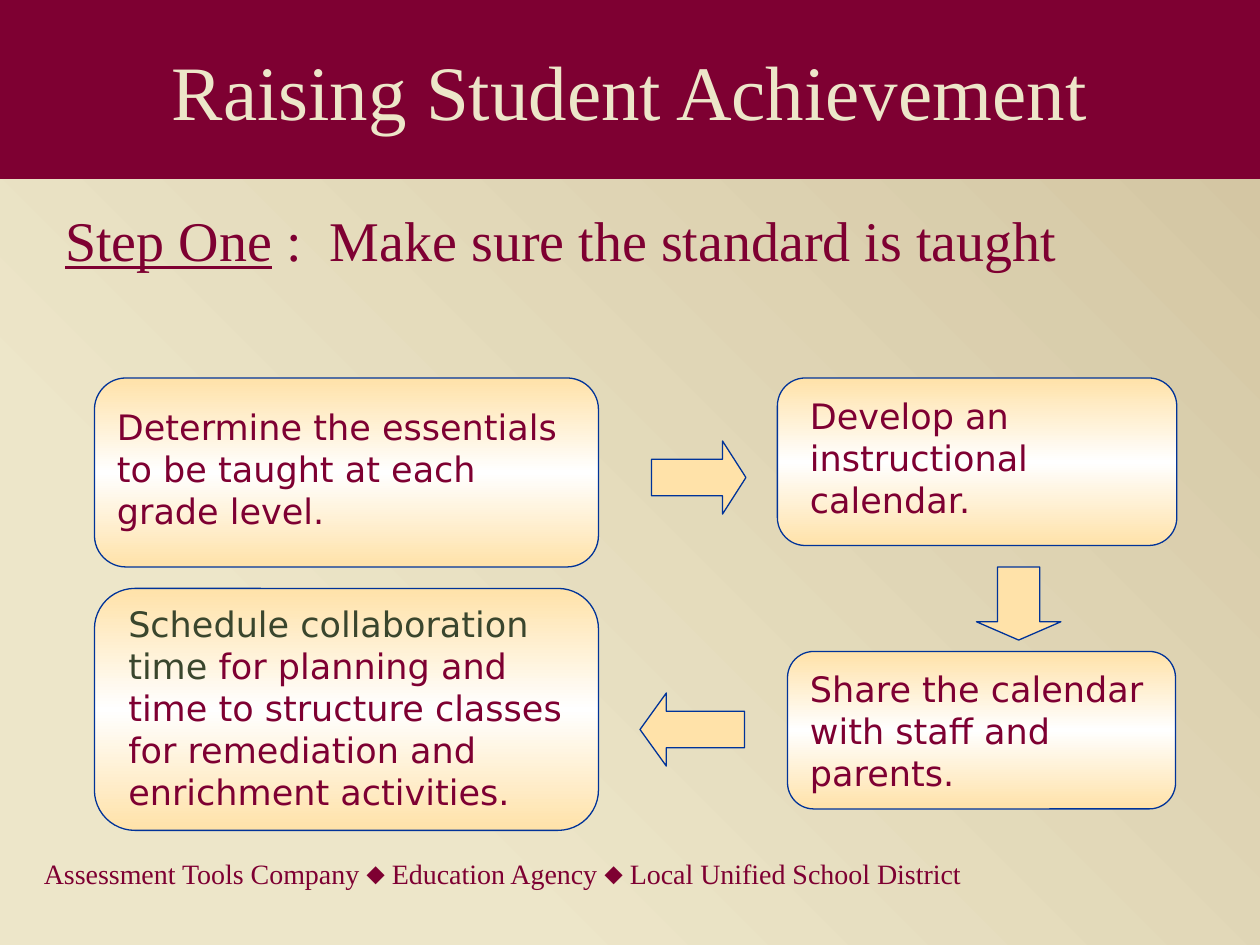
from copy import deepcopy

from pptx import Presentation
from pptx.dml.color import RGBColor
from pptx.enum.shapes import MSO_SHAPE as SHAPE
from pptx.enum.text import MSO_ANCHOR as ANCHOR, PP_ALIGN as ALIGN
from pptx.oxml.ns import qn
from pptx.util import Inches, Pt

COLORS = {"maroon": "7E0032", "cream": "EDE6C9", "tan": "D1C39F", "peach": "FFE2A9",
          "white": "FFFFFF", "blue": "003399", "green": "3A462D"}
SERIF, SANS = "Times New Roman", "DejaVu Sans"
STEPS = [
    (SHAPE.FLOWCHART_ALTERNATE_PROCESS, (0.75, 3, 4, 1.5), (0.83, 3.17, 3.83, 1.1),
     [("Determine the essentials to be taught at each grade level.", {})]),
    (SHAPE.ROUNDED_RECTANGLE, (6.17, 3, 3.17, 1.33), (6.33, 3.08, 2.83, 1.1),
     [("Develop an instructional calendar.", {})]),
    (SHAPE.ROUNDED_RECTANGLE, (6.25, 5.17, 3.08, 1.25), (6.33, 5.25, 2.92, 1.1),
     [("Share the calendar with staff and parents.", {})]),
    (SHAPE.ROUNDED_RECTANGLE, (0.75, 4.67, 4, 1.92), (0.92, 4.73, 3.83, 1.77),
     [("Schedule collaboration time ", {"color": "green"}),
      ("for planning and time to structure classes for remediation "
       "and enrichment activities.", {})]),
]
ARROWS = [
    (SHAPE.RIGHT_ARROW, (5.17, 3.5, 0.75, 0.58), 0.32),
    (SHAPE.DOWN_ARROW, (7.75, 4.5, 0.67, 0.58), 0.25),
    (SHAPE.LEFT_ARROW, (5.08, 5.5, 0.83, 0.58), 0.36),
]


def rgb(name):
    """Return the named palette colour."""
    return RGBColor.from_string(COLORS[name])


def set_gradient(fill, element, stops, angle):
    """Fill with a linear gradient of (position, colour name) stops."""
    fill.gradient()
    fill.gradient_angle = angle
    gs_list = element.find(".//" + qn("a:gsLst"))
    while len(gs_list) < len(stops):
        gs_list.append(deepcopy(gs_list[-1]))
    for stop, (position, color) in zip(fill.gradient_stops, stops):
        stop.position = position
        stop.color.rgb = rgb(color)


def write_text(sp, runs, size, font=SERIF, color="maroon", align=ALIGN.LEFT, anchor=ANCHOR.TOP):
    """Write one paragraph of (text, overrides) runs into a shape."""
    tf = sp.text_frame
    tf.word_wrap = True
    tf.vertical_anchor = anchor
    p = tf.paragraphs[0]
    p.alignment = align
    for text, style in runs:
        r = p.add_run()
        r.text = text
        r.font.name = font
        r.font.size = Pt(size)
        r.font.underline = style.get("underline", False)
        r.font.color.rgb = rgb(style.get("color", color))


def add_text(slide, box, runs, size, **style):
    """Add a text box holding one paragraph."""
    write_text(slide.shapes.add_textbox(*map(Inches, box)), runs, size, **style)


def add_shape(slide, kind, box, fill=None, line=None):
    """Add a preset shape without shadow."""
    sp = slide.shapes.add_shape(kind, *map(Inches, box))
    sp.shadow.inherit = False
    if fill:
        sp.fill.solid()
        sp.fill.fore_color.rgb = rgb(fill)
    if line:
        sp.line.color.rgb = rgb(line)
        sp.line.width = Pt(0.75)
    else:
        sp.line.fill.background()
    return sp


def add_step(slide, kind, box, text_box, runs):
    """Add a gradient step card and its text."""
    sp = add_shape(slide, kind, box, line="blue")
    set_gradient(sp.fill, sp.element, [(0, "peach"), (0.5, "white"), (1, "peach")], 90)
    add_text(slide, text_box, runs, 20, font=SANS)


def add_arrow(slide, kind, box, head):
    """Add a block arrow with the given head length ratio."""
    sp = add_shape(slide, kind, box, "peach", "blue")
    sp.adjustments[0] = 0.5
    sp.adjustments[1] = head


def main():
    """Build and save the slide."""
    prs = Presentation()
    prs.slide_width, prs.slide_height = Inches(10), Inches(7.5)
    slide = prs.slides.add_slide(prs.slide_layouts[6])
    set_gradient(slide.background.fill, slide.element, [(0.24, "cream"), (1, "tan")], 45)

    add_text(slide, (0.25, 6.75, 8, 0.5),
             [("Assessment Tools Company ⬥ Education Agency ⬥ Local Unified School District", {})], 16)
    title = add_shape(slide, SHAPE.RECTANGLE, (0, 0, 10, 1.42), "maroon")
    write_text(title, [("Raising Student Achievement", {})], 44, color="cream",
               align=ALIGN.CENTER, anchor=ANCHOR.MIDDLE)
    add_text(slide, (0.42, 1.58, 9.25, 4.67),
             [("Step One", {"underline": True}), (" :  Make sure the standard is taught", {})], 32)
    for step in STEPS:
        add_step(slide, *step)
    for arrow in ARROWS:
        add_arrow(slide, *arrow)
    prs.save("out.pptx")


if __name__ == "__main__":
    main()
